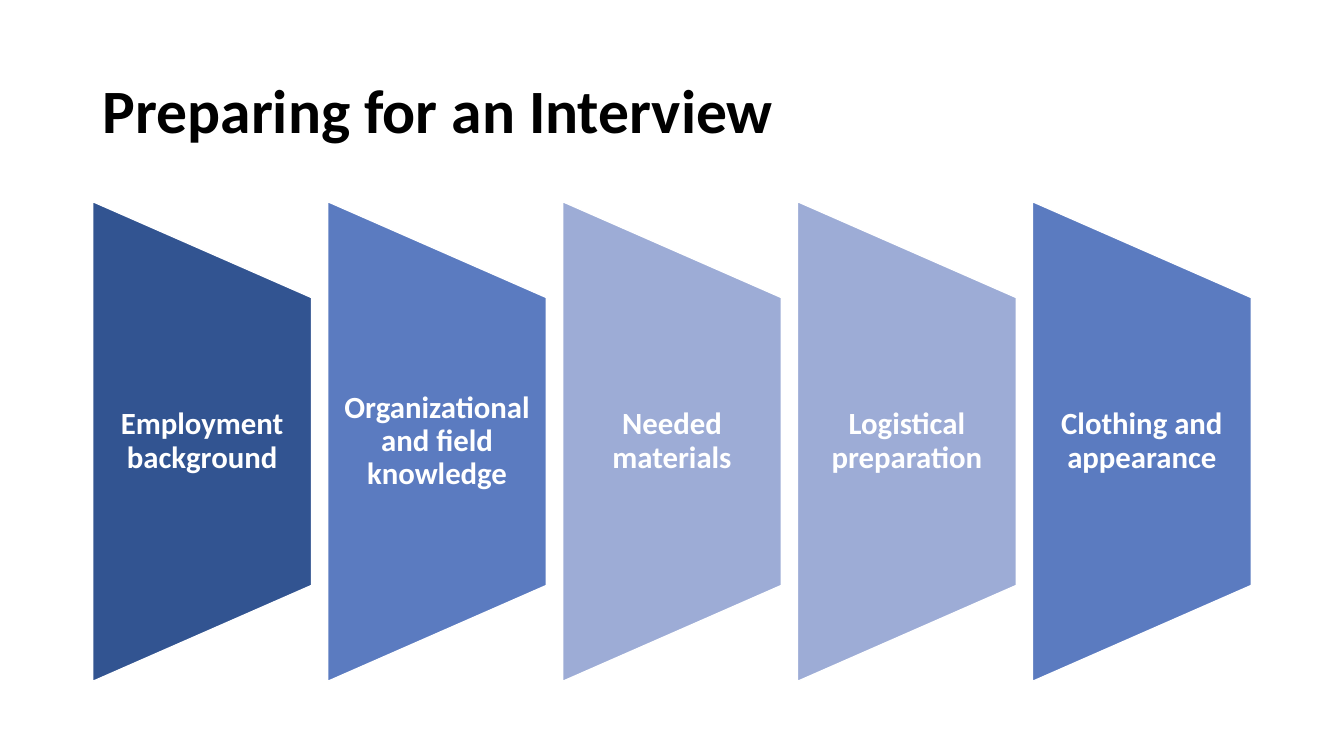
from pptx import Presentation
from pptx.dml.color import RGBColor as RGB
from pptx.enum.shapes import MSO_SHAPE as Shape
from pptx.enum.text import MSO_ANCHOR as Anchor, PP_ALIGN as Align
from pptx.util import Inches, Pt

# Content
TITLE = "Preparing for an Interview"
STEPS = [
    ("Employment background", "navy"),
    ("Organizational and field knowledge", "blue"),
    ("Needed materials", "pale"),
    ("Logistical preparation", "pale"),
    ("Clothing and appearance", "blue"),
]
COLORS = {"navy": "325491", "blue": "5B7BC0", "pale": "9DACD6",
          "white": "FFFFFF", "black": "000000"}

# Layout in inches
LEFT, PITCH, WIDTH = 0.92, 2.33, 2.17
MIDDLE, TALL, LABEL = 4.38, 4.76, 2.86

deck = Presentation()
deck.slide_width, deck.slide_height = Inches(13.33), Inches(7.5)
slide = deck.slides.add_slide(deck.slide_layouts[6])


def color(name):
    return RGB.from_string(COLORS[name])


def add_text(text, x, y, w, h, size=22, ink="white", align=Align.CENTER,
             side=0.15, edge=0):
    box = slide.shapes.add_textbox(Inches(x), Inches(y), Inches(w), Inches(h))
    frame = box.text_frame
    frame.word_wrap = True
    frame.vertical_anchor = Anchor.MIDDLE
    frame.margin_left = frame.margin_right = Inches(side)
    frame.margin_top = frame.margin_bottom = Inches(edge)
    para = frame.paragraphs[0]
    para.alignment, para.line_spacing = align, 0.9
    run = para.add_run()
    run.text = text
    font = run.font
    font.name, font.size, font.bold = "Calibri", Pt(size), True
    font.color.rgb = color(ink)


def add_panel(x, fill):
    # Turned a quarter left, so width and height swap about the centre
    panel = slide.shapes.add_shape(
        Shape.FLOWCHART_MANUAL_OPERATION,
        Inches(x + (WIDTH - TALL) / 2), Inches(MIDDLE - WIDTH / 2),
        Inches(TALL), Inches(WIDTH))
    panel.rotation = 270
    panel.shadow.inherit = False
    panel.fill.solid()
    panel.fill.fore_color.rgb = color(fill)
    panel.line.color.rgb = color("white")
    panel.line.width = Pt(1)


# Title
add_text(TITLE, LEFT, 0.4, 11.5, 1.45, size=44, ink="black",
         align=Align.LEFT, side=0.1, edge=0.05)

# Row of steps
for i, (step, fill) in enumerate(STEPS):
    x = LEFT + i * PITCH
    add_panel(x, fill)
    add_text(step, x, MIDDLE - LABEL / 2, WIDTH, LABEL)

deck.save("out.pptx")
